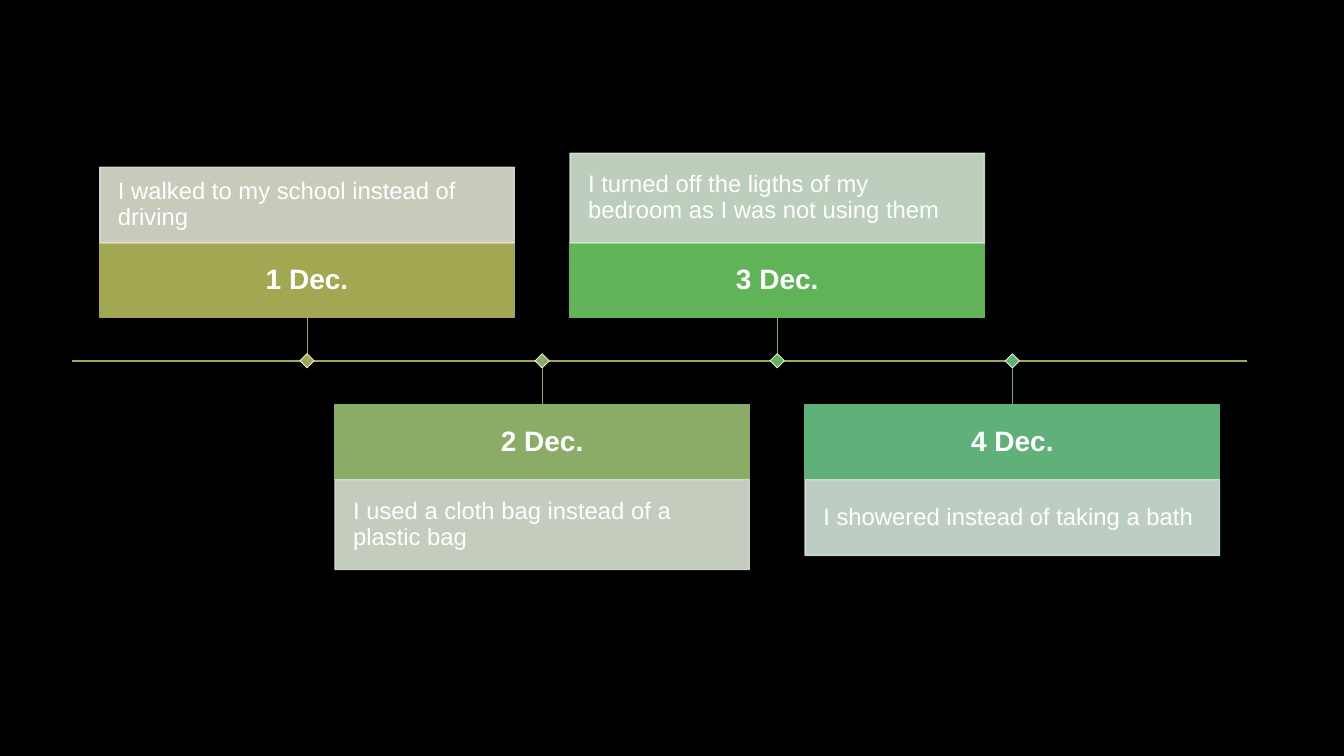
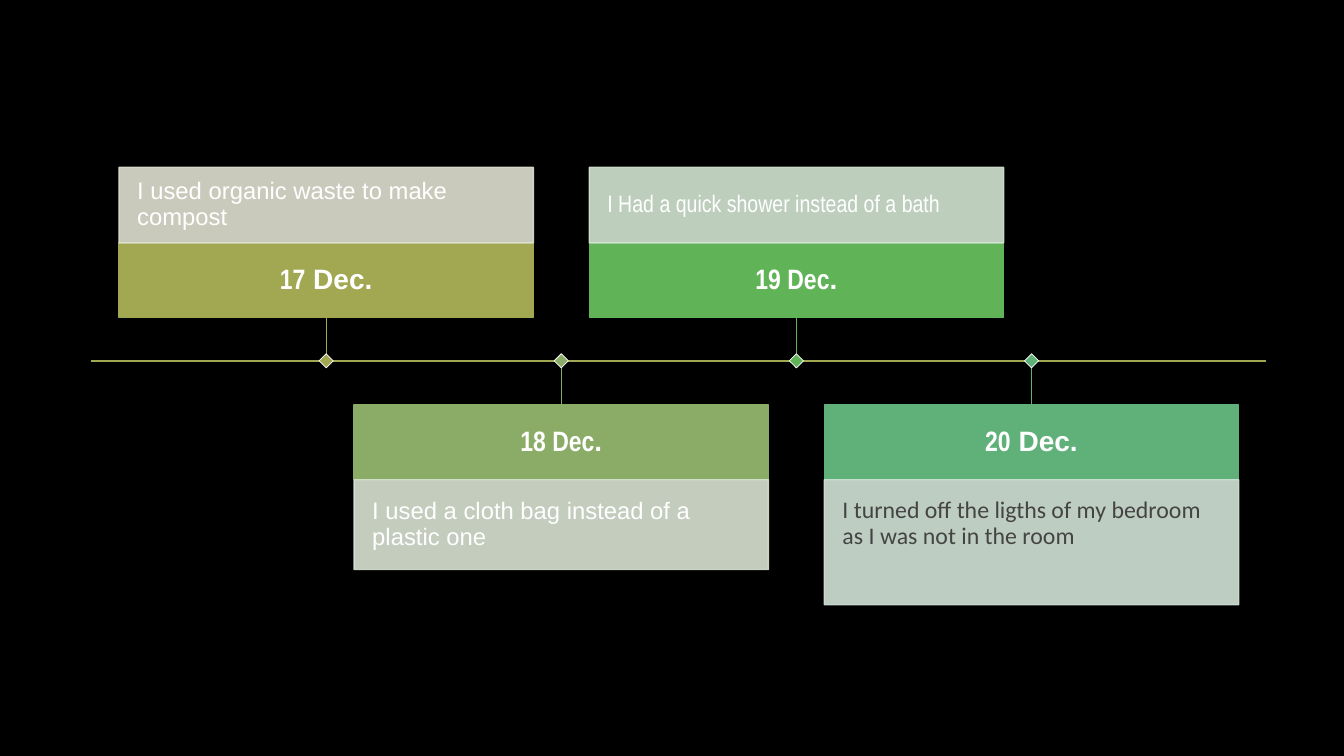
import lxml.etree
import pptx
import pptx.dml.color
import pptx.enum.shapes
import pptx.enum.text
import pptx.oxml.ns
import pptx.util

Inches = pptx.util.Inches
Pt = pptx.util.Pt
RGBColor = pptx.dml.color.RGBColor
Shape = pptx.enum.shapes.MSO_SHAPE
Anchor = pptx.enum.text.MSO_ANCHOR
Align = pptx.enum.text.PP_ALIGN
qn = pptx.oxml.ns.qn

BLACK = RGBColor(0x00, 0x00, 0x00)
WHITE = RGBColor(0xFF, 0xFF, 0xFF)
GREY = RGBColor(0x44, 0x44, 0x44)
OLIVE = RGBColor(0xA2, 0xA8, 0x52)
MOSS = RGBColor(0x8B, 0xAC, 0x67)
GREEN = RGBColor(0x61, 0xB3, 0x58)
TEAL = RGBColor(0x5F, 0xB0, 0x79)
SAND = RGBColor(0xE0, 0xE1, 0xD1)
SAGE = RGBColor(0xDA, 0xE3, 0xD3)
MINT = RGBColor(0xD2, 0xE5, 0xD1)
FOAM = RGBColor(0xD2, 0xE4, 0xD7)
HUES = [(OLIVE, SAND), (MOSS, SAGE), (GREEN, MINT), (TEAL, FOAM)]

SANS, THIN, SOFT = "Arial", "Arial Narrow", "Calibri"
AXIS, SPAN = 3.58, 11.66
STEP = SPAN / 5
WIDE, HEAD, INSET, MARK = 4.11, 0.74, 0.28, 0.1
ABOVE, BELOW = 2.41, 4.02


class Deck:
    """Draws dated cards along a timeline on dark slides."""

    def __init__(self):
        self.prs = pptx.Presentation()
        self.prs.slide_width = Inches(13.33)
        self.prs.slide_height = Inches(7.5)
        back = self.prs.slide_master.background.fill
        back.solid()
        back.fore_color.rgb = BLACK

    def page(self):
        self.slide = self.prs.slides.add_slide(self.prs.slide_layouts[6])

    def line(self, x1, y1, x2, y2, color, weight):
        kind = pptx.enum.shapes.MSO_CONNECTOR.STRAIGHT
        ends = [Inches(n) for n in (x1, y1, x2, y2)]
        line = self.slide.shapes.add_connector(kind, *ends)
        line.line.color.rgb = color
        line.line.width = Pt(weight)
        lxml.etree.SubElement(line._element.spPr, qn("a:effectLst"))

    def box(self, x, y, w, h, fill, edge, weight=1):
        place = [Inches(n) for n in (x, y, w, h)]
        box = self.slide.shapes.add_shape(Shape.RECTANGLE, *place)
        box.shadow.inherit = False
        box.fill.solid()
        box.fill.fore_color.rgb = fill
        box.line.color.rgb = edge
        box.line.width = Pt(weight)
        return box

    def fade(self, box, share):
        for color in box._element.spPr.iter(qn("a:srgbClr")):
            alpha = lxml.etree.SubElement(color, qn("a:alpha"))
            alpha.set("val", str(share * 1000))

    def text(self, box, parts, size, pad, align, color=WHITE, bold=False):
        frame = box.text_frame
        frame.word_wrap = True
        frame.vertical_anchor = Anchor.MIDDLE
        frame.margin_left = frame.margin_right = Inches(pad)
        frame.margin_top = frame.margin_bottom = Inches(pad)
        para = frame.paragraphs[0]
        para.alignment = align
        para.line_spacing = 0.9
        for words, face in parts:
            run = para.add_run()
            run.text = words
            run.font.name = face
            run.font.size = Pt(size)
            run.font.bold = bold
            run.font.color.rgb = color

    def card(self, x, up, date, note, tall, hues, ink=WHITE):
        dark, pale = hues
        top = ABOVE if up else BELOW
        head = self.box(x, top, WIDE, HEAD, dark, dark)
        self.text(head, date, 20, 0.11, Align.CENTER, bold=True)
        y = top - tall if up else top + HEAD
        body = self.box(x, y, WIDE, tall, pale, pale)
        self.fade(body, 90)
        self.text(body, note, 17, 0.18, Align.LEFT, ink)
        if tall > 1:
            body.text_frame.vertical_anchor = Anchor.TOP
        mid = x + WIDE / 2
        self.line(mid, top + HEAD if up else top, mid, AXIS, dark, 0.5)
        mark = self.box(mid - MARK / 2, AXIS - MARK / 2, MARK, MARK,
                        dark, WHITE, 0.5)
        mark.rotation = 45

    def chain(self, left, cards):
        self.page()
        self.line(left, AXIS, left + SPAN, AXIS, OLIVE, 1)
        for i, (card, hues) in enumerate(zip(cards, HUES)):
            date, note, tall, *ink = card
            self.card(left + INSET + i * STEP, i % 2 == 0,
                      date, note, tall, hues, *ink)


FIRST = [
    ([("1 Dec.", SANS)],
     [("I walked to my school instead of driving", SANS)], 0.75),
    ([("2 Dec.", SANS)],
     [("I used a cloth bag instead of a plastic bag", SANS)], 0.89),
    ([("3 Dec.", SANS)],
     [("I turned off the ligths of my bedroom as I was not using them",
       SANS)], 0.89),
    ([("4 Dec.", SANS)],
     [("I showered instead of taking a bath", SANS)], 0.75),
]
LATER = [
    ([("17", THIN), (" Dec.", SANS)],
     [("I used organic waste to make compost", SANS)], 0.75),
    ([("18 Dec", THIN), (".", SANS)],
     [("I used a cloth bag instead of a plastic one", SANS)], 0.89),
    ([("19 Dec", THIN), (".", SANS)],
     [("I Had a quick shower instead of a bath", THIN)], 0.75),
    ([("20", THIN), (" Dec.", SANS)],
     [("I turned off the ligths of my bedroom as I was not in the room",
       SOFT)], 1.24, GREY),
]


def main():
    deck = Deck()
    deck.chain(0.71, FIRST)
    deck.chain(0.9, LATER)
    deck.prs.save("out.pptx")


if __name__ == "__main__":
    main()
